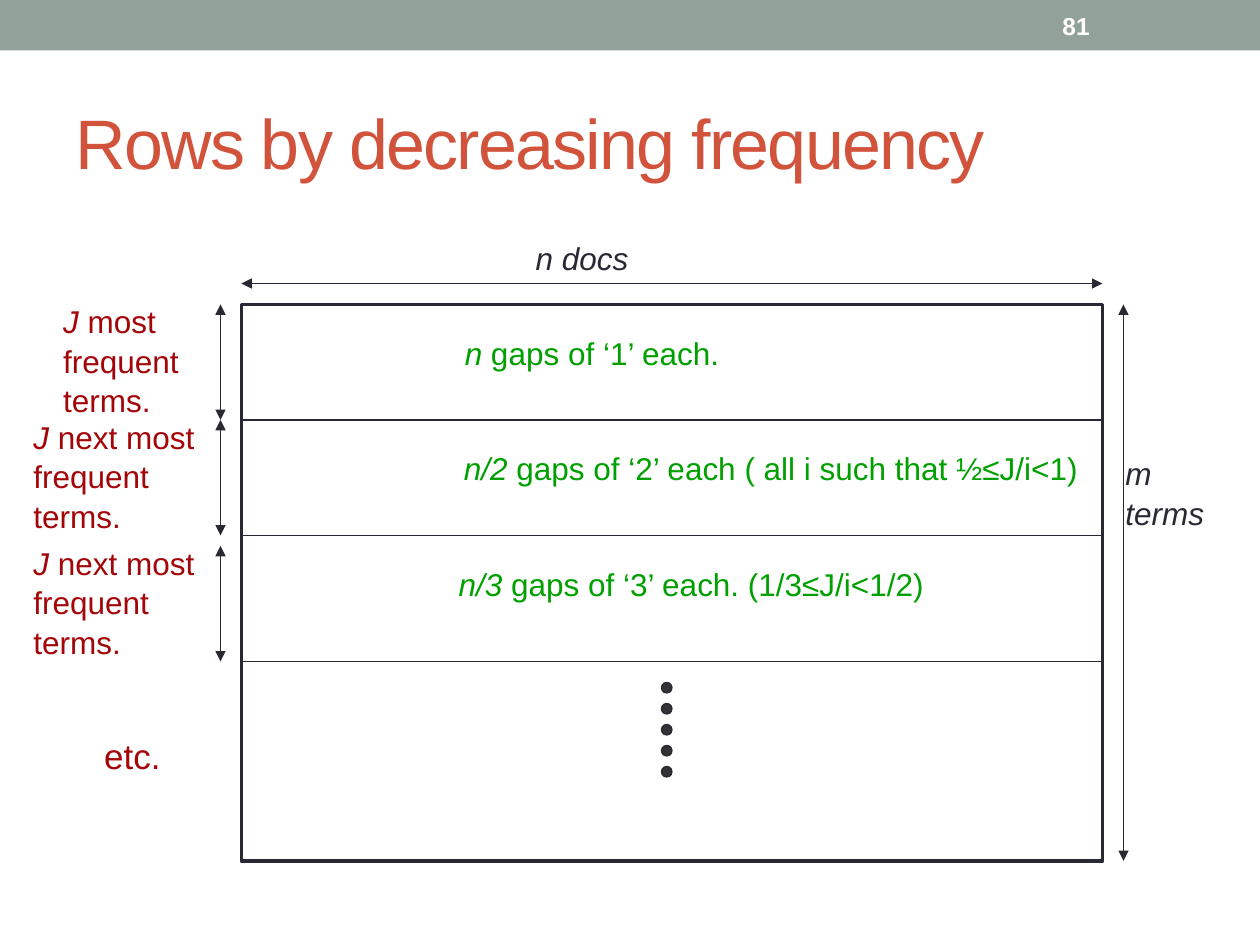
from lxml import etree
from pptx import Presentation
from pptx import util as u
from pptx.dml.color import RGBColor
from pptx.enum import shapes, text
from pptx.oxml import ns

HUES = {"bar": "93A299", "title": "D2533C", "ink": "292934", "dot": "333333",
        "red": "A40508", "green": "00A000", "white": "FFFFFF"}
BASE = {"name": "Arial", "size": u.Pt(18), "bold": False}


def hue(name):
    return RGBColor.from_string(HUES[name])


class Pen:
    def __init__(self, slide, style):
        self.slide = slide
        self.style = style

    def shape(self, kind, box, fill=None, line=None):
        item = self.slide.shapes.add_shape(kind, *map(u.Pt, box))
        item.shadow.inherit = False
        if fill:
            item.fill.solid()
            item.fill.fore_color.rgb = hue(fill)
        else:
            item.fill.background()
        if line:
            item.line.color.rgb = hue("ink")
            item.line.width = u.Pt(line)
        else:
            item.line.fill.background()

    def line(self, start, end, heads=False):
        item = self.slide.shapes.add_connector(
            shapes.MSO_CONNECTOR.STRAIGHT, *map(u.Pt, start + end))
        item.line.color.rgb = hue("ink")
        item.line.width = u.Pt(0.75)
        if heads:
            stroke = item._element.spPr.find(ns.qn("a:ln"))
            for tag in ("a:headEnd", "a:tailEnd"):
                etree.SubElement(stroke, ns.qn(tag), type="triangle")
        etree.SubElement(item._element.spPr, ns.qn("a:effectLst"))

    def label(self, box, lines, color, lead=1.05, middle=False, track=0, **extra):
        item = self.slide.shapes.add_textbox(*map(u.Pt, box))
        frame = item.text_frame
        frame.word_wrap = True
        if middle:
            frame.vertical_anchor = text.MSO_ANCHOR.MIDDLE
        for row, (slant, plain) in enumerate(lines):
            para = frame.add_paragraph() if row else frame.paragraphs[0]
            para.line_spacing = lead
            for words, tilt in ((slant, True), (plain, False)):
                if not words:
                    continue
                run = para.add_run()
                run.text = words
                look = {**self.style, **extra, "italic": tilt}
                for key, value in look.items():
                    setattr(run.font, key, value)
                run.font.color.rgb = hue(color)
                if track:
                    run._r.get_or_add_rPr().set("spc", str(track * 100))


def main():
    deck = Presentation()
    deck.slide_width, deck.slide_height = u.Pt(720), u.Pt(540)
    pen = Pen(deck.slides.add_slide(deck.slide_layouts[6]), BASE)
    rect = shapes.MSO_SHAPE.RECTANGLE
    left, right, top, base = 138, 630, 174, 492

    pen.shape(rect, (0, 0, 720, 28.8), fill="bar")
    pen.label((36, 42, 648, 78), [("", "Rows by decreasing frequency")], "title",
              lead=1, middle=True, track=-1, size=u.Pt(40))

    pen.shape(rect, (left, top, right - left, base - top), line=2)
    pen.line((left, top - 12), (right, top - 12), heads=True)
    pen.label((299, 132, 91, 36), [("n docs", "")], "ink")
    pen.line((right + 12, top), (right + 12, base), heads=True)
    pen.label((636, 255, 81, 65), [("m", ""), ("terms", "")], "ink")

    for y in (240, 306, 378):
        pen.line((left, y), (right, y))
    for step in range(5):
        pen.shape(shapes.MSO_SHAPE.OVAL, (378, 390 + 12 * step, 6, 6),
                  fill="dot", line=0.75)

    bands = [
        (174, 240, 29, 168, " most", 258.5, "n", " gaps of ‘1’ each."),
        (240, 306, 12, 234, " next most", 258, "n/2",
         " gaps of ‘2’ each ( all i such that ½≤J/i<1)"),
        (312, 378, 12, 306, " next most", 255, "n/3",
         " gaps of ‘3’ each. (1/3≤J/i<1/2)"),
    ]
    for row, (start, end, x, y, rank, mid, count, gaps) in enumerate(bands):
        pen.line((left - 12, start), (left - 12, end), heads=True)
        pen.label((x, y, 114, 72),
                  [("J", rank), ("", "frequent"), ("", "terms.")], "red")
        pen.label((mid, 186 + 66 * row, 381, 30), [(count, gaps)], "green")

    pen.label((52.5, 415, 50, 31), [("", "etc.")], "red", size=u.Pt(20))
    pen.label((600, 1.5, 84, 26), [("", "81")], "white", lead=1, middle=True,
              size=u.Pt(14), bold=True)
    deck.save("out.pptx")


if __name__ == "__main__":
    main()
